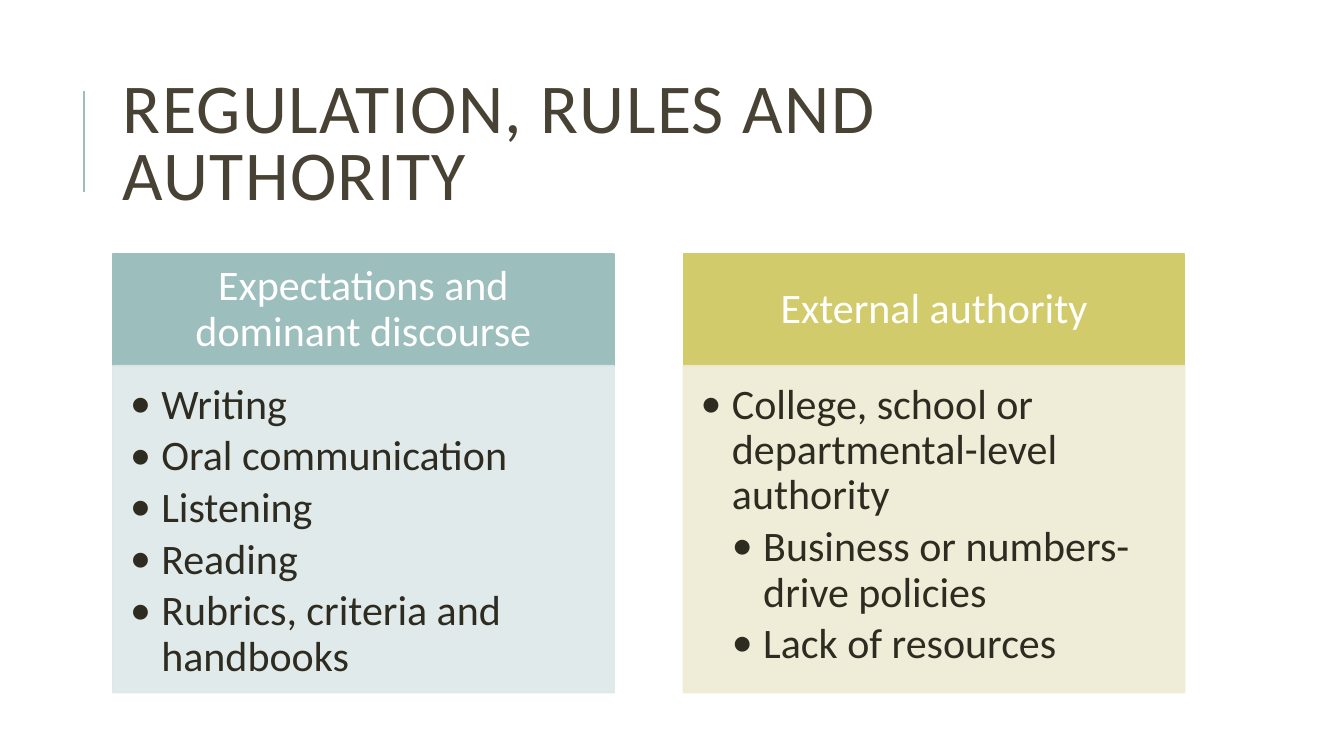
"""Build the slide on regulation, rules and authority."""
from dataclasses import dataclass

from lxml.etree import SubElement
from pptx import Presentation
from pptx.dml.color import RGBColor
from pptx.enum.shapes import MSO_CONNECTOR as Connector, MSO_SHAPE as ShapeKind
from pptx.enum.text import MSO_ANCHOR as Anchor, PP_ALIGN as Align
from pptx.oxml.ns import qn
from pptx.shapes.autoshape import Shape
from pptx.slide import Slide
from pptx.text.text import _Paragraph as Paragraph
from pptx.util import Emu, Pt

SCALE = 9144
COLORS = {
    "title": "474233", "header_text": "FFFFFF", "body_text": "2E2B21",
    "teal": "9CBEBD", "pale_teal": "DEE8E8", "olive": "D2CB6C", "pale_olive": "EEECD4",
}
FONT = "Calibri"
COLUMN_WIDTH, COLUMN_TOP, HEADER_HEIGHT, BODY_HEIGHT = 497, 252, 111, 324
INDENT = 31


@dataclass(frozen=True)
class Bullet:
    text: str
    level: int = 1


@dataclass(frozen=True)
class Column:
    left: int
    heading: str
    header_color: str
    body_color: str
    bullets: tuple[Bullet, ...]


COLUMNS = (
    Column(112, "Expectations and dominant discourse", "teal", "pale_teal", (
        Bullet("Writing"),
        Bullet("Oral communication"),
        Bullet("Listening"),
        Bullet("Reading"),
        Bullet("Rubrics, criteria and handbooks"),
    )),
    Column(678, "External authority", "olive", "pale_olive", (
        Bullet("College, school or departmental-level authority"),
        Bullet("Business or numbers-drive policies", 2),
        Bullet("Lack of resources", 2),
    )),
)


def px(length: int) -> Emu:
    return Emu(length * SCALE)


def rgb(name: str) -> RGBColor:
    return RGBColor.from_string(COLORS[name])


def add_run(paragraph: Paragraph, text: str, size: int, color: str, tracking: int = 0) -> None:
    run = paragraph.add_run()
    run.text = text
    run.font.name = FONT
    run.font.size = Pt(size)
    run.font.color.rgb = rgb(color)
    if tracking:
        run.font._element.set("spc", str(tracking * 100))


def set_frame(shape: Shape, anchor: Anchor, insets: tuple[int, int, int, int]) -> None:
    frame = shape.text_frame
    frame.word_wrap = True
    frame.vertical_anchor = anchor
    frame.margin_left, frame.margin_top, frame.margin_right, frame.margin_bottom = map(px, insets)


def add_panel(slide: Slide, left: int, top: int, height: int, color: str, opacity: int = 100) -> Shape:
    panel = slide.shapes.add_shape(
        ShapeKind.RECTANGLE, px(left), px(top), px(COLUMN_WIDTH), px(height))
    panel.shadow.inherit = False
    panel.fill.solid()
    panel.fill.fore_color.rgb = rgb(color)
    panel.line.color.rgb = rgb(color)
    panel.line.width = Pt(1.25)
    if opacity < 100:
        for color_element in list(panel._element.spPr.iter(qn("a:srgbClr"))):
            SubElement(color_element, qn("a:alpha")).set("val", str(opacity * 1000))
    return panel


def format_bullet(paragraph: Paragraph, level: int) -> None:
    paragraph.level = level
    paragraph.alignment = Align.LEFT
    paragraph.line_spacing = 0.9
    paragraph.space_after = Pt(4.5)
    properties = paragraph._p.get_or_add_pPr()
    properties.set("marL", str(px(INDENT * level)))
    properties.set("indent", str(px(-INDENT)))
    SubElement(properties, qn("a:buFont")).set("typeface", FONT)
    SubElement(properties, qn("a:buChar")).set("char", "•")


def add_column(slide: Slide, column: Column) -> None:
    header = add_panel(slide, column.left, COLUMN_TOP, HEADER_HEIGHT, column.header_color)
    set_frame(header, Anchor.MIDDLE, (23, 13, 23, 13))
    heading = header.text_frame.paragraphs[0]
    heading.alignment = Align.CENTER
    heading.line_spacing = 0.9
    add_run(heading, column.heading, 30, "header_text")

    body = add_panel(
        slide, column.left, COLUMN_TOP + HEADER_HEIGHT, BODY_HEIGHT, column.body_color, 90)
    set_frame(body, Anchor.TOP, (17, 17, 23, 26))
    for index, bullet in enumerate(column.bullets):
        frame = body.text_frame
        paragraph = frame.add_paragraph() if index else frame.paragraphs[0]
        format_bullet(paragraph, bullet.level)
        add_run(paragraph, bullet.text, 30, "body_text")


def add_title(slide: Slide) -> None:
    rule = slide.shapes.add_connector(Connector.STRAIGHT, px(83), px(190), px(83), px(90))
    rule.line.color.rgb = rgb("teal")
    rule.line.width = Pt(1.5)
    SubElement(rule._element.spPr, qn("a:effectLst"))

    title = slide.shapes.add_textbox(px(112), px(64), px(1063), px(164))
    set_frame(title, Anchor.MIDDLE, (10, 5, 10, 5))
    paragraph = title.text_frame.paragraphs[0]
    paragraph.line_spacing = 0.8
    add_run(paragraph, "REGULATION, RULES AND AUTHORITY", 50, "title", tracking=1)


def main() -> None:
    presentation = Presentation()
    presentation.slide_width = px(1333)
    presentation.slide_height = px(750)
    slide = presentation.slides.add_slide(presentation.slide_layouts[6])
    add_title(slide)
    for column in COLUMNS:
        add_column(slide, column)
    presentation.save("out.pptx")


if __name__ == "__main__":
    main()
